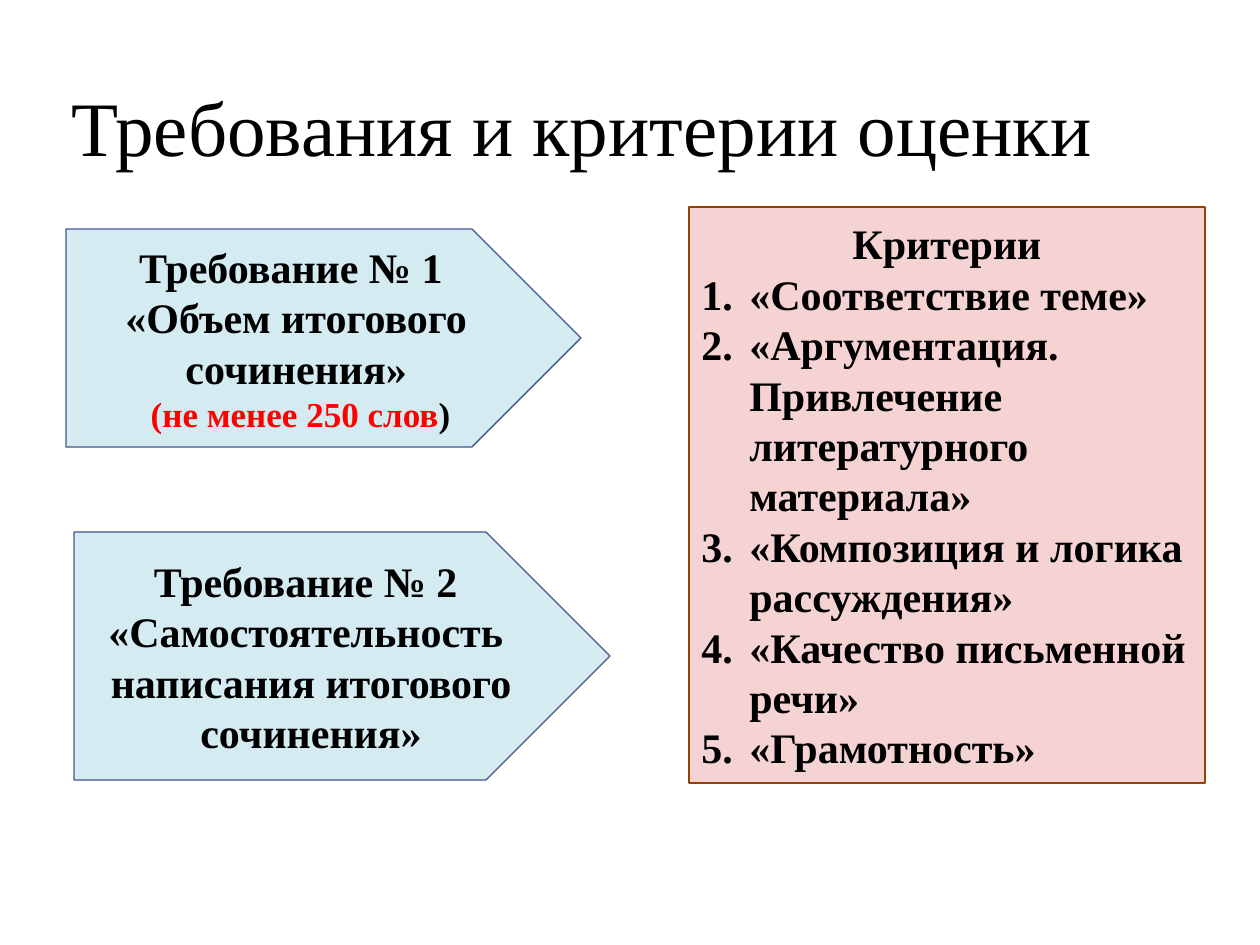
"""Build a slide with two essay requirements and the list of grading criteria."""
from lxml.etree import SubElement
from pptx import Presentation
from pptx.dml.color import RGBColor
from pptx.enum.shapes import MSO_SHAPE
from pptx.enum.text import MSO_ANCHOR, PP_ALIGN
from pptx.oxml.ns import qn
from pptx.util import Emu, Pt

FONT = "Times New Roman"
COLORS = {
    "text": "000000",
    "accent": "FF0000",
    "arrow": "D4EBF1",
    "arrow_line": "44578C",
    "box": "F5D3D3",
    "box_line": "964101",
}
CRITERIA = [
    "«Соответствие теме»",
    "«Аргументация. Привлечение литературного материала»",
    "«Композиция и логика рассуждения»",
    "«Качество письменной речи»",
    "«Грамотность»",
]


def px(n):
    return Emu(round(n * 914400 / 126))


def rgb(name):
    return RGBColor.from_string(COLORS[name])


def place(sp, box):
    sp.left, sp.top, sp.width, sp.height = map(px, box)


def style(r, size, color="text", bold=True):
    r.font.name = FONT
    r.font.size = Pt(size)
    r.font.bold = bold
    r.font.color.rgb = rgb(color)


def add_title(s, text, box):
    sp = s.shapes.title
    place(sp, box)
    tf = sp.text_frame
    tf.text = text
    tf.vertical_anchor = MSO_ANCHOR.MIDDLE
    p = tf.paragraphs[0]
    p.alignment = PP_ALIGN.CENTER
    style(p.runs[0], 44, bold=False)


def add_panel(s, kind, box, look, lines):
    sp = s.shapes.add_shape(kind, *map(px, box))
    sp.shadow.inherit = False
    sp.fill.solid()
    sp.fill.fore_color.rgb = rgb(look)
    sp.line.color.rgb = rgb(look + "_line")
    sp.line.width = Pt(0.75)
    tf = sp.text_frame
    tf.word_wrap = True
    tf.vertical_anchor = MSO_ANCHOR.MIDDLE
    tf.text = "\n".join(lines)
    for p in tf.paragraphs:
        p.alignment = PP_ALIGN.CENTER
        for r in p.runs:
            style(r, 24)
    return tf


def add_limit(tf, text, end):
    p = tf.add_paragraph()
    p.alignment = PP_ALIGN.CENTER
    for part, color in ((text, "accent"), (end, "text")):
        r = p.add_run()
        r.text = part
        style(r, 20, color)


def number(p):
    p.alignment = PP_ALIGN.LEFT
    pPr = p._p.get_or_add_pPr()
    pPr.set("marL", str(px(48)))
    pPr.set("indent", str(-px(48)))
    SubElement(pPr, qn("a:buFont"), typeface="+mj-lt")
    SubElement(pPr, qn("a:buAutoNum"), type="arabicPeriod")


def main():
    prs = Presentation()
    prs.slide_width, prs.slide_height = px(1260), px(945)
    s = prs.slides.add_slide(prs.slide_layouts[5])
    add_title(s, "Требования и критерии оценки", (15, 47, 1134, 158))
    tf = add_panel(s, MSO_SHAPE.PENTAGON, (66, 229, 515, 218), "arrow",
                   ["Требование № 1 ", "«Объем итогового сочинения»"])
    add_limit(tf, " (не менее 250 слов", ")")
    add_panel(s, MSO_SHAPE.PENTAGON, (74, 532, 536, 248), "arrow",
              ["Требование № 2 ", "«Самостоятельность ",
               "написания итогового сочинения»"])
    tf = add_panel(s, MSO_SHAPE.FLOWCHART_PROCESS, (689, 207, 516, 576), "box",
                   ["Критерии", *CRITERIA])
    for p in tf.paragraphs[1:]:
        number(p)
    prs.save("out.pptx")


if __name__ == "__main__":
    main()
